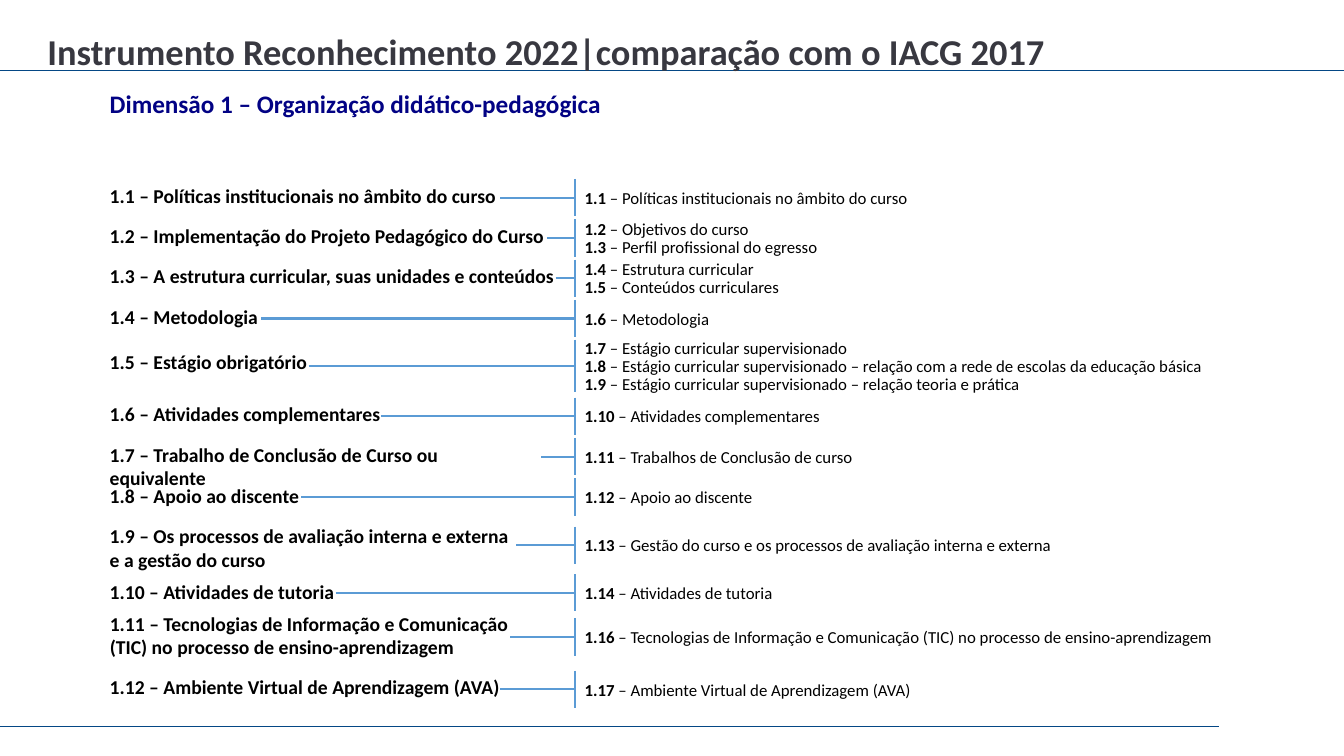
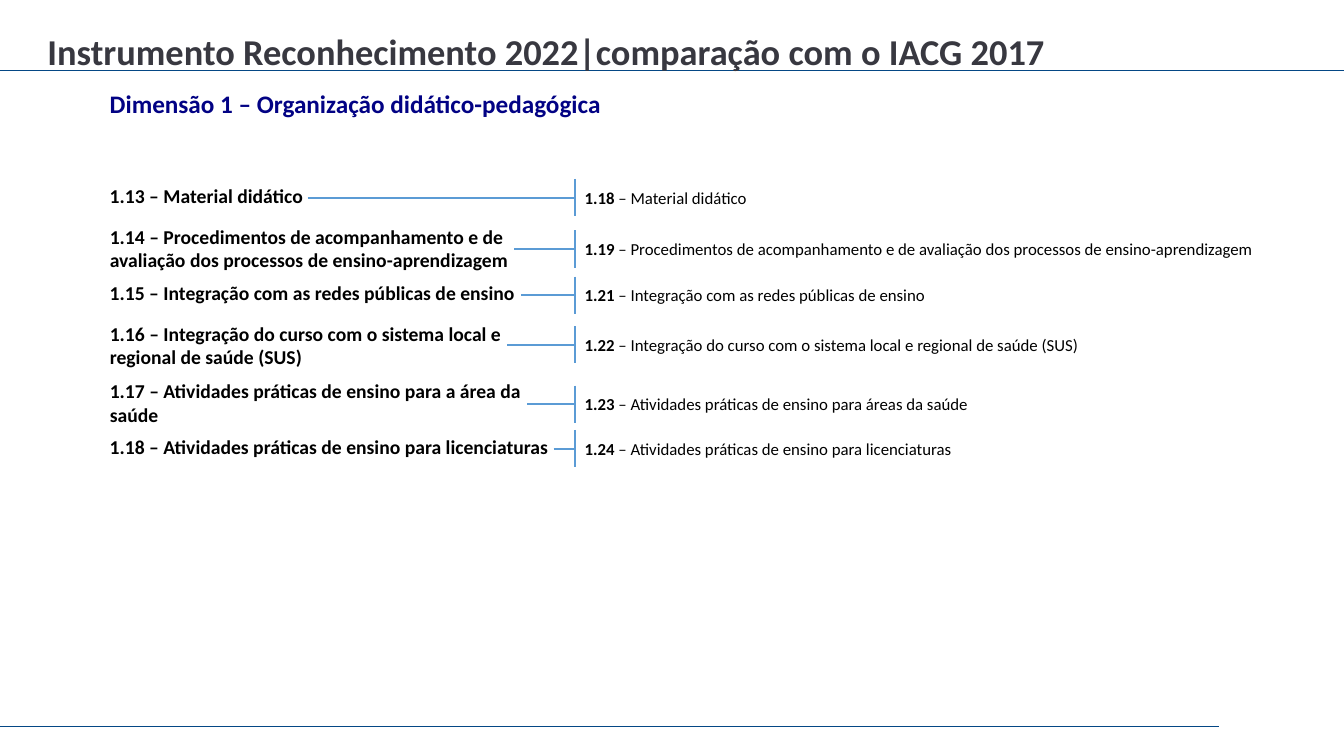
from pptx import Presentation
from pptx.dml.color import RGBColor
from pptx.enum.shapes import MSO_CONNECTOR
from pptx.enum.text import MSO_ANCHOR, MSO_AUTO_SIZE, PP_ALIGN
from pptx.oxml.ns import qn
from pptx.util import Inches, Pt
from lxml import etree

TITLE = "Instrumento Reconhecimento 2022|comparação com o IACG 2017"
SUBTITLE = "Dimensão 1 – Organização didático-pedagógica"

# Per row: 2022 indicator, label top, label width, link start, row centre,
# then the matching 2017 indicators as (number, name)
SLIDES = [
    [
        ("1.1 – Políticas institucionais no âmbito do curso", 1.78, 4.7, 4.96, 1.96,
         [("1.1", "Políticas institucionais no âmbito do curso")]),
        ("1.2 – Implementação do Projeto Pedagógico do Curso", 2.17, 4.7, 5.43, 2.36,
         [("1.2", "Objetivos do curso"),
          ("1.3", "Perfil profissional do egresso")]),
        ("1.3 – A estrutura curricular, suas unidades e conteúdos", 2.57, 4.7, 5.51, 2.76,
         [("1.4", "Estrutura curricular"),
          ("1.5", "Conteúdos curriculares")]),
        ("1.4 – Metodologia", 2.98, 4.7, 2.59, 3.16,
         [("1.6", "Metodologia")]),
        ("1.5 – Estágio obrigatório", 3.42, 4.7, 3.06, 3.63,
         [("1.7", "Estágio curricular supervisionado"),
          ("1.8", "Estágio curricular supervisionado – relação com a rede de escolas "
                  "da educação básica"),
          ("1.9", "Estágio curricular supervisionado – relação teoria e prática")]),
        ("1.6 – Atividades complementares", 3.94, 4.7, 3.78, 4.13,
         [("1.10", "Atividades complementares")]),
        ("1.7 – Trabalho de Conclusão de Curso ou equivalente", 4.34, 4.2, 5.37, 4.53,
         [("1.11", "Trabalhos de Conclusão de curso")]),
        ("1.8 – Apoio ao discente", 4.75, 4.7, 2.99, 4.93,
         [("1.12", "Apoio ao discente")]),
        ("1.9 – Os processos de avaliação interna e externa e a gestão do curso",
         5.15, 4.2, 5.12, 5.41,
         [("1.13", "Gestão do curso e os processos de avaliação interna e externa")]),
        ("1.10 – Atividades de tutoria", 5.7, 4.7, 3.33, 5.88,
         [("1.14", "Atividades de tutoria")]),
        ("1.11 – Tecnologias de Informação e Comunicação (TIC) no processo de "
         "ensino-aprendizagem", 6.02, 4.45, 5.06, 6.32,
         [("1.16", "Tecnologias de Informação e Comunicação (TIC) no processo de "
                   "ensino-aprendizagem")]),
        ("1.12 – Ambiente Virtual de Aprendizagem (AVA)", 6.65, 4.7, 4.96, 6.84,
         [("1.17", "Ambiente Virtual de Aprendizagem (AVA)")]),
    ],
    [
        ("1.13 – Material didático", 1.78, 4.7, 3.05, 1.96,
         [("1.18", "Material didático")]),
        ("1.14 – Procedimentos de acompanhamento e de avaliação dos processos de "
         "ensino-aprendizagem", 2.18, 4.45, 5.1, 2.47,
         [("1.19", "Procedimentos de acompanhamento e de avaliação dos processos de "
                   "ensino-aprendizagem")]),
        ("1.15 – Integração com as redes públicas de ensino", 2.74, 4.7, 5.17, 2.93,
         [("1.21", "Integração com as redes públicas de ensino")]),
        ("1.16 – Integração do curso com o sistema local e regional de saúde (SUS)",
         3.14, 4.45, 5.03, 3.42,
         [("1.22", "Integração do curso com o sistema local e regional de saúde (SUS)")]),
        ("1.17 – Atividades práticas de ensino para a área da saúde",
         3.71, 4.45, 5.23, 4.01,
         [("1.23", "Atividades práticas de ensino para áreas da saúde")]),
        ("1.18 – Atividades práticas de ensino para licenciaturas", 4.27, 4.7, 5.49, 4.45,
         [("1.24", "Atividades práticas de ensino para licenciaturas")]),
    ],
]

COLORS = {"title": "383840", "subtitle": "020284", "text": "000000",
          "rule": "044785", "link": "5B9BD5"}
FONT = "Calibri"
LABEL_X, BAR_X = 0.99, 5.7
ITEM_W, ITEM_H, ITEM_STEP = 7.1, 0.3, 0.18
BAR_HEIGHTS = {1: 0.37, 2: 0.37, 3: 0.52}


def add_run(p, text, size, color, bold=True):
    r = p.add_run()
    r.text = text
    r.font.name, r.font.size, r.font.bold = FONT, Pt(size), bold
    r.font.color.rgb = RGBColor.from_string(COLORS[color])


def add_line(slide, x1, y1, x2, y2, color, width):
    line = slide.shapes.add_connector(
        MSO_CONNECTOR.STRAIGHT, Inches(x1), Inches(y1), Inches(x2), Inches(y2))
    line.line.color.rgb = RGBColor.from_string(COLORS[color])
    line.line.width = Pt(width)
    etree.SubElement(line.element.spPr, qn("a:effectLst"))
    return line


def add_text(slide, x, y, w, h, size, color, runs):
    """Add a text box of one paragraph; runs are (text, bold) pairs."""
    tf = slide.shapes.add_textbox(Inches(x), Inches(y), Inches(w), Inches(h)).text_frame
    tf.word_wrap = True
    for text, bold in runs:
        add_run(tf.paragraphs[0], text, size, color, bold)


def add_title(slide):
    sp = slide.shapes.title
    sp.left, sp.top, sp.width, sp.height = map(Inches, (0.37, 0.29, 10.36, 0.36))
    tf = sp.text_frame
    tf.auto_size = MSO_AUTO_SIZE.NONE
    tf.word_wrap = True
    tf.vertical_anchor = MSO_ANCHOR.TOP
    p = tf.paragraphs[0]
    p.alignment, p.line_spacing = PP_ALIGN.LEFT, 0.9
    add_run(p, TITLE, 26, "title")


def add_row(slide, label, label_top, label_width, link_start, centre, items):
    add_text(slide, LABEL_X, label_top, label_width, 0.34, 14, "text", [(label, True)])
    half = BAR_HEIGHTS[len(items)] / 2
    add_line(slide, BAR_X, centre - half, BAR_X, centre + half, "link", 1.5)
    add_line(slide, link_start, centre, BAR_X, centre, "link", 1.5)
    first_top = centre - ITEM_H / 2 - (len(items) - 1) / 2 * ITEM_STEP
    for i, (number, name) in enumerate(items):
        add_text(slide, BAR_X, first_top + i * ITEM_STEP, ITEM_W, ITEM_H, 12, "text",
                 [(number, True), (f" – {name}", False)])


def add_master_rules(prs, slide):
    """Draw the two rules on a slide, then move them to the master."""
    for y, right in ((0.7, 13.44), (7.21, 12.09)):
        rule = add_line(slide, 0, y, right, y, "rule", 0.5)
        prs.slide_master.shapes.element.append(rule.element)


def main():
    prs = Presentation()
    prs.slide_width, prs.slide_height = Inches(13.33), Inches(7.5)
    for rows in SLIDES:
        s = prs.slides.add_slide(prs.slide_layouts[5])
        add_title(s)
        add_text(s, LABEL_X, 0.83, 5.4, 0.4, 18, "subtitle", [(SUBTITLE, True)])
        for row in rows:
            add_row(s, *row)
    add_master_rules(prs, prs.slides[0])
    prs.save("out.pptx")


if __name__ == "__main__":
    main()
